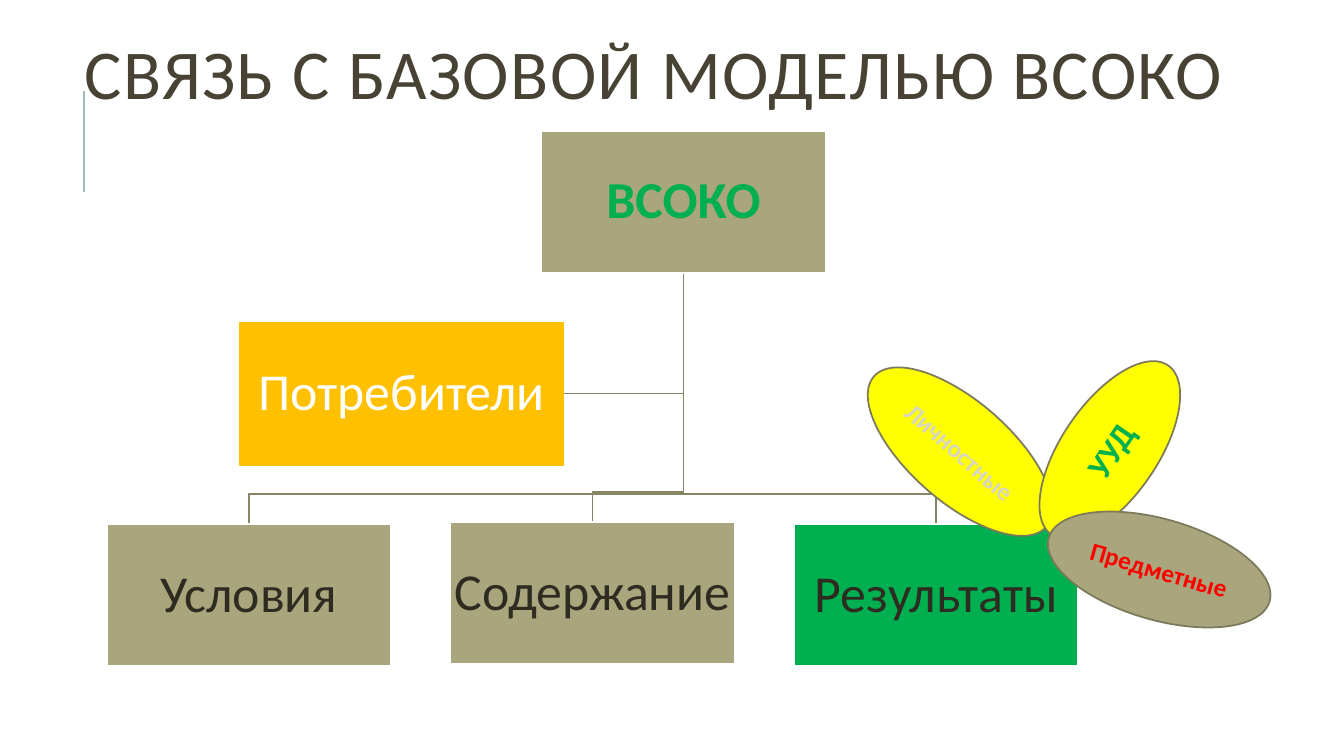
from dataclasses import dataclass

import lxml.etree
import pptx
import pptx.dml.color
import pptx.enum.shapes
import pptx.enum.text
import pptx.oxml.ns
import pptx.util

Pt = pptx.util.Pt
SHAPES = pptx.enum.shapes.MSO_SHAPE
ALIGN = pptx.enum.text.PP_ALIGN

FONT = "Calibri"
KHAKI = "A9A57C"
GREEN = "00B050"
AMBER = "FFC000"
YELLOW = "FFFF00"
DARK = "2E2B21"
WHITE = "FFFFFF"
LINE_WIDTH = 1.25
BOX_WIDTH, BOX_HEIGHT = 203.0, 101.5
CHILD_LEFT, CHILD_STEP = 76.3, 245.5
BEND_GAP = 21.6


@dataclass
class Box:
    text: str
    left: float
    top: float
    fill: str = KHAKI
    color: str = DARK
    width: float = BOX_WIDTH
    outline: str = WHITE
    bold: bool = False

    @property
    def center(self) -> float:
        return self.left + self.width / 2

    @property
    def middle(self) -> float:
        return self.top + BOX_HEIGHT / 2


@dataclass
class Petal:
    text: str
    left: float
    top: float
    width: float
    height: float
    rotation: float
    fill: str
    color: str
    size: float = 18


ROOT = Box("ВСОКО", 386.7, 93.6, color=GREEN, bold=True)
CONSUMERS = Box("Потребители", 171.4, 230.4, AMBER, WHITE, 231.1, AMBER)
CHILDREN = [
    Box(text, CHILD_LEFT + index * CHILD_STEP, top, fill)
    for index, (text, top, fill) in enumerate([
        ("Условия", 374.4, KHAKI),
        ("Содержание", 373, KHAKI),
        ("Результаты", 374.4, GREEN),
    ])
]
PETALS = [
    Petal("Личностные", 604.1, 286.6, 163.4, 72, 41.1, YELLOW, "D8D6BE"),
    Petal("УУД", 719.3, 287.3, 146.9, 68.4, 304.5, YELLOW, GREEN, 24),
    Petal("Предметные", 745.9, 370.8, 164.2, 72, 16.1, KHAKI, "FF0000"),
]


def rgb(value: str) -> pptx.dml.color.RGBColor:
    return pptx.dml.color.RGBColor.from_string(value)


def write_text(shape, text: str, *, size: float, color: str, bold: bool = False,
               align=ALIGN.CENTER, line_spacing: float = 1.0, inset: float = 2.2,
               tracking: float = 0, wrap: bool = True) -> None:
    frame = shape.text_frame
    frame.word_wrap = wrap
    frame.vertical_anchor = pptx.enum.text.MSO_ANCHOR.MIDDLE
    frame.margin_left = frame.margin_right = Pt(inset)
    frame.margin_top = frame.margin_bottom = Pt(min(inset, 3.6))
    paragraph = frame.paragraphs[0]
    paragraph.alignment = align
    paragraph.line_spacing = line_spacing
    run = paragraph.add_run()
    run.text = text
    run.font.name = FONT
    run.font.size = Pt(size)
    run.font.bold = bold
    run.font.color.rgb = rgb(color)
    if tracking:
        run._r.get_or_add_rPr().set("spc", str(int(tracking * 100)))


def style_shape(shape, fill: str, outline: str) -> None:
    shape.shadow.inherit = False
    shape.fill.solid()
    shape.fill.fore_color.rgb = rgb(fill)
    shape.line.color.rgb = rgb(outline)
    shape.line.width = Pt(LINE_WIDTH)


def draw_title(slide, text: str) -> None:
    accent = slide.shapes.add_connector(
        pptx.enum.shapes.MSO_CONNECTOR.STRAIGHT, Pt(60), Pt(136.8), Pt(60), Pt(64.8))
    accent.line.color.rgb = rgb("9CBEBD")
    accent.line.width = Pt(1.5)
    lxml.etree.SubElement(accent._element.spPr, pptx.oxml.ns.qn("a:effectLst"))
    title = slide.shapes.add_textbox(Pt(53.3), Pt(28.1), Pt(840.2), Pt(57.6))
    write_text(title, text, size=50, color="474233", align=ALIGN.LEFT,
               line_spacing=0.8, inset=7.2, tracking=1)


def draw_branch(slide, points: list[tuple[float, float]]) -> None:
    vertices = [(Pt(x), Pt(y)) for x, y in points]
    builder = slide.shapes.build_freeform(*vertices[0])
    builder.add_line_segments(vertices[1:], close=False)
    branch = builder.convert_to_shape()
    branch.shadow.inherit = False
    branch.fill.background()
    branch.line.color.rgb = rgb("878463")
    branch.line.width = Pt(LINE_WIDTH)


def draw_box(slide, box: Box) -> None:
    shape = slide.shapes.add_shape(
        SHAPES.RECTANGLE, Pt(box.left), Pt(box.top), Pt(box.width), Pt(BOX_HEIGHT))
    style_shape(shape, box.fill, box.outline)
    write_text(shape, box.text, size=37, color=box.color, bold=box.bold,
               line_spacing=0.9)


def draw_petal(slide, petal: Petal) -> None:
    shape = slide.shapes.add_shape(
        SHAPES.OVAL, Pt(petal.left), Pt(petal.top), Pt(petal.width), Pt(petal.height))
    shape.rotation = petal.rotation
    style_shape(shape, petal.fill, "7D7A5C")
    write_text(shape, petal.text, size=petal.size, color=petal.color, bold=True,
               wrap=False)


def main() -> None:
    presentation = pptx.Presentation()
    presentation.slide_width = Pt(960)
    presentation.slide_height = Pt(540)
    slide = presentation.slides.add_slide(presentation.slide_layouts[6])

    draw_title(slide, "СВЯЗЬ С БАЗОВОЙ МОДЕЛЬЮ ВСОКО")
    start = (ROOT.center, ROOT.top + BOX_HEIGHT)
    draw_branch(slide, [start, (ROOT.center, CONSUMERS.middle),
                        (CONSUMERS.left + CONSUMERS.width, CONSUMERS.middle)])
    for child in CHILDREN:
        bend = child.top - BEND_GAP
        draw_branch(slide, [start, (ROOT.center, bend), (child.center, bend),
                            (child.center, child.top)])
    for box in [ROOT, *CHILDREN, CONSUMERS]:
        draw_box(slide, box)
    for petal in PETALS:
        draw_petal(slide, petal)

    presentation.save("out.pptx")


if __name__ == "__main__":
    main()
